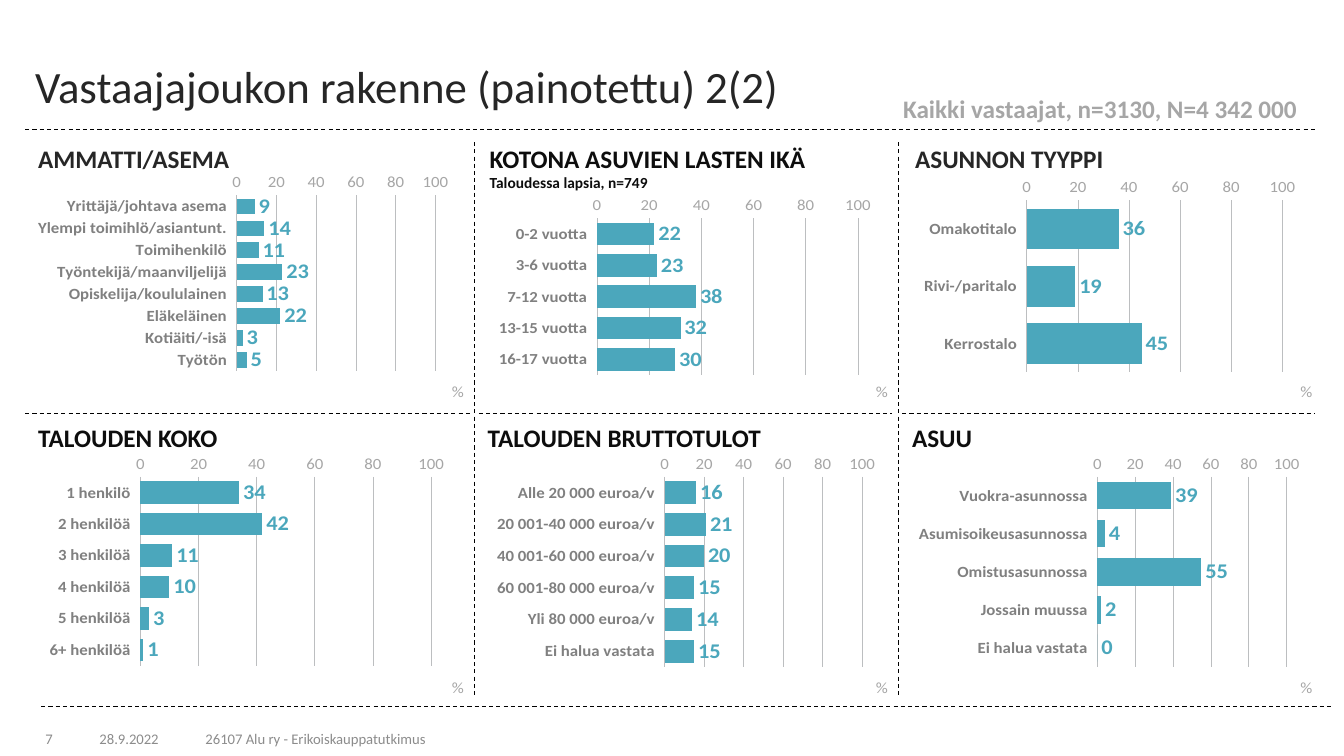
from lxml import etree
from pptx import Presentation
from pptx.chart.data import CategoryChartData
from pptx.dml.color import RGBColor
from pptx.enum.chart import (XL_AXIS_CROSSES, XL_CHART_TYPE, XL_LABEL_POSITION,
                             XL_TICK_LABEL_POSITION, XL_TICK_MARK)
from pptx.enum.dml import MSO_LINE
from pptx.enum.shapes import MSO_CONNECTOR
from pptx.enum.text import MSO_ANCHOR, PP_ALIGN
from pptx.oxml.ns import qn
from pptx.util import Pt

BAR, STRAIGHT, DASH = XL_CHART_TYPE.BAR_CLUSTERED, MSO_CONNECTOR.STRAIGHT, MSO_LINE.DASH
AT_MAXIMUM, LOW, NO_TICK = XL_AXIS_CROSSES.MAXIMUM, XL_TICK_LABEL_POSITION.LOW, XL_TICK_MARK.NONE
OUTSIDE_END = XL_LABEL_POSITION.OUTSIDE_END
TOP, MIDDLE, BOTTOM = MSO_ANCHOR.TOP, MSO_ANCHOR.MIDDLE, MSO_ANCHOR.BOTTOM
LEFT, CENTER, RIGHT = PP_ALIGN.LEFT, PP_ALIGN.CENTER, PP_ALIGN.RIGHT

FONT = "Calibri"
TEAL, BLACK, DARK, INK = "4BA7BC", "000000", "262626", "0D0D0D"
GREY, PALE, FOOTER, GRID = "808080", "A6A6A6", "8C8C8C", "BCBEC0"

COLUMN_RIGHTS = (335.5, 638.6, 941.8)
ROWS = ((98.5, 290.2), (298, 501.8))

# Each panel: column, row, heading lines, heading colour, heading left,
# chart left, chart drop below the panel top, inner plot (x, y, w, h), values
PANELS = [
    (0, 0, ["AMMATTI/ASEMA"], DARK, 20.2, 18, 25.3, (0.476, 0.046, 0.447, 0.811),
     {"Yrittäjä/johtava asema": 9, "Ylempi toimihlö/asiantunt.": 14, "Toimihenkilö": 11,
      "Työntekijä/maanviljelijä": 23, "Opiskelija/koululainen": 13, "Eläkeläinen": 22,
      "Kotiäiti/-isä": 3, "Työtön": 5}),
    (1, 0, ["KOTONA ASUVIEN LASTEN IKÄ", "Taloudessa lapsia, n=749"], INK, 342.7, 342.7, 41.9,
     (0.283, 0.041, 0.63, 0.819),
     {"0-2 vuotta": 22, "3-6 vuotta": 23, "7-12 vuotta": 38, "13-15 vuotta": 32,
      "16-17 vuotta": 30}),
    (2, 0, ["ASUNNON TYYPPI"], DARK, 646.6, 645.8, 28.9, (0.296, 0.041, 0.617, 0.819),
     {"Omakotitalo": 36, "Rivi-/paritalo": 19, "Kerrostalo": 45}),
    (0, 1, ["TALOUDEN KOKO"], INK, 20.2, 19.4, 26.7, (0.256, 0.041, 0.657, 0.819),
     {"1 henkilö": 34, "2 henkilöä": 42, "3 henkilöä": 11, "4 henkilöä": 10,
      "5 henkilöä": 3, "6+ henkilöä": 1}),
    (1, 1, ["TALOUDEN BRUTTOTULOT"], INK, 341.3, 343.4, 26.7, (0.445, 0.041, 0.478, 0.825),
     {"Alle 20 000 euroa/v": 16, "20 001-40 000 euroa/v": 21, "40 001-60 000 euroa/v": 20,
      "60 001-80 000 euroa/v": 15, "Yli 80 000 euroa/v": 14, "Ei halua vastata": 15}),
    (2, 1, ["ASUU"], INK, 644.4, 646.6, 26.7, (0.465, 0.041, 0.458, 0.825),
     {"Vuokra-asunnossa": 39, "Asumisoikeusasunnossa": 4, "Omistusasunnossa": 55,
      "Jossain muussa": 2, "Ei halua vastata": 0}),
]

DIVIDERS = [
    (18, 92.2, 941, 92.2), (29.5, 504.7, 951.8, 504.7),
    (18, 295.2, 335.5, 295.2), (342, 295.2, 637.2, 295.2), (644.4, 295.2, 938.9, 295.2),
    (339.1, 101.5, 339.1, 498.2), (641.5, 101.5, 641.5, 498.2),
]


def color(value):
    return RGBColor.from_string(value)


def set_font(font, size, shade, bold=False):
    for name, value in {"name": FONT, "size": Pt(size), "bold": bold}.items():
        setattr(font, name, value)
    font.color.rgb = color(shade)


def add_text(slide, box, lines, shade, bold=False, align=LEFT, anchor=TOP, spacing=None):
    """Place a text box; lines holds a (text, size) pair for each paragraph."""
    frame = slide.shapes.add_textbox(*map(Pt, box)).text_frame
    for name, value in {"word_wrap": True, "vertical_anchor": anchor}.items():
        setattr(frame, name, value)
    for index, (text, size) in enumerate(lines):
        para = frame.add_paragraph() if index else frame.paragraphs[0]
        para.alignment, para.line_spacing = align, spacing
        span = para.add_run()
        span.text = text
        set_font(span.font, size, shade, bold)


def add_divider(slide, ends):
    divider = slide.shapes.add_connector(STRAIGHT, *map(Pt, ends))
    divider.line.width, divider.line.dash_style = Pt(0.75), DASH
    divider.line.color.rgb = color(BLACK)
    etree.SubElement(divider._element.spPr, qn("a:effectLst"))


def set_layout(parent, index, settings):
    """Give a chart part a manual layout as the child at index."""
    for old in parent.findall(qn("c:layout")):
        parent.remove(old)
    layout = etree.Element(qn("c:layout"))
    manual = etree.SubElement(layout, qn("c:manualLayout"))
    for name, value in settings.items():
        etree.SubElement(manual, qn(f"c:{name}")).set("val", str(value))
    parent.insert(index, layout)


def add_bar_chart(slide, box, plot_area, shares):
    chart_data = CategoryChartData()
    chart_data.categories = list(shares)
    chart_data.add_series("Series 1", list(shares.values()))
    chart = slide.shapes.add_chart(BAR, *map(Pt, box), chart_data).chart
    chart.has_legend = chart.has_title = False
    set_font(chart.font, 12, BLACK)
    edges = {"xMode": "edge", "yMode": "edge"}
    set_layout(chart._chartSpace.chart.plotArea, 0,
               {"layoutTarget": "inner", **edges, **dict(zip("xywh", plot_area))})

    plot = chart.plots[0]
    for name, value in {"gap_width": 40, "vary_by_categories": False,
                        "has_data_labels": True}.items():
        setattr(plot, name, value)
    fill = plot.series[0].format.fill
    fill.solid()
    fill.fore_color.rgb = color(TEAL)
    labels = plot.data_labels
    for name, value in {"show_value": True, "position": OUTSIDE_END, "number_format": "#,##0",
                        "number_format_is_linked": False}.items():
        setattr(labels, name, value)
    set_font(labels.font, 16, TEAL, True)

    categories, percent = chart.category_axis, chart.value_axis
    for axis, shade, bold in ((categories, GREY, True), (percent, PALE, False)):
        axis.major_tick_mark = axis.minor_tick_mark = NO_TICK
        axis.format.line.fill.background()
        set_font(axis.tick_labels.font, 12, shade, bold)
    for name, value in {"reverse_order": True, "crosses": AT_MAXIMUM,
                        "tick_label_position": LOW, "has_major_gridlines": False}.items():
        setattr(categories, name, value)
    for name, value in {"minimum_scale": 0, "maximum_scale": 100, "major_unit": 20,
                        "has_major_gridlines": True}.items():
        setattr(percent, name, value)
    grid = percent.major_gridlines.format.line
    grid.width = Pt(0.5)
    grid.color.rgb = color(GRID)

    title = percent.axis_title
    span = title.text_frame.paragraphs[0].add_run()
    span.text = "%"
    set_font(span.font, 12, PALE)
    width, height = box[2:]
    set_layout(title._element, 1, {**edges, "x": round(1 - 15 / width, 3),
                                   "y": round(1 - 18 / height, 3)})


def add_panel(slide, box, heading, shade, chart_left, chart_drop, plot_area, shares):
    """Place a heading at the top of the box and a bar chart below it."""
    left, top, right, bottom = box
    lines = list(zip(heading, (18, 11)))
    add_text(slide, (left, top, 258, 13.6 + 15 * len(lines)), lines, shade, True)
    chart_top = top + chart_drop
    add_bar_chart(slide, (chart_left, chart_top, right - chart_left, bottom - chart_top),
                  plot_area, shares)


def add_header(slide, left, top):
    add_text(slide, (left, top, 607, 48.2), [("Vastaajajoukon rakenne (painotettu) 2(2)", 32)],
             DARK, anchor=MIDDLE, spacing=0.9)
    add_text(slide, (left + 620, top + 23.8, 303.8, 28.8),
             [("Kaikki vastaajat, n=3130, N=4 342 000", 18)], PALE, True)


def add_footer(slide, left, top):
    for offset, width, text, align in (
            (0, 42.5, "7", RIGHT), (45.4, 89.3, "28.9.2022", CENTER),
            (137.5, 426.2, "26107 Alu ry - Erikoiskauppatutkimus", LEFT)):
        add_text(slide, (left + offset, top, width, 21.6), [(text, 10.5)], FOOTER,
                 align=align, anchor=BOTTOM)


def main():
    deck = Presentation()
    deck.slide_width, deck.slide_height = Pt(960), Pt(540)
    slide = deck.slides.add_slide(deck.slide_layouts[6])
    add_header(slide, 18, 39.6)
    for ends in DIVIDERS:
        add_divider(slide, ends)
    for column, row, heading, shade, left, *chart_parts in PANELS:
        top, bottom = ROWS[row]
        add_panel(slide, (left, top, COLUMN_RIGHTS[column], bottom), heading, shade, *chart_parts)
    add_footer(slide, 2.2, 515.5)
    deck.save("out.pptx")


if __name__ == "__main__":
    main()
